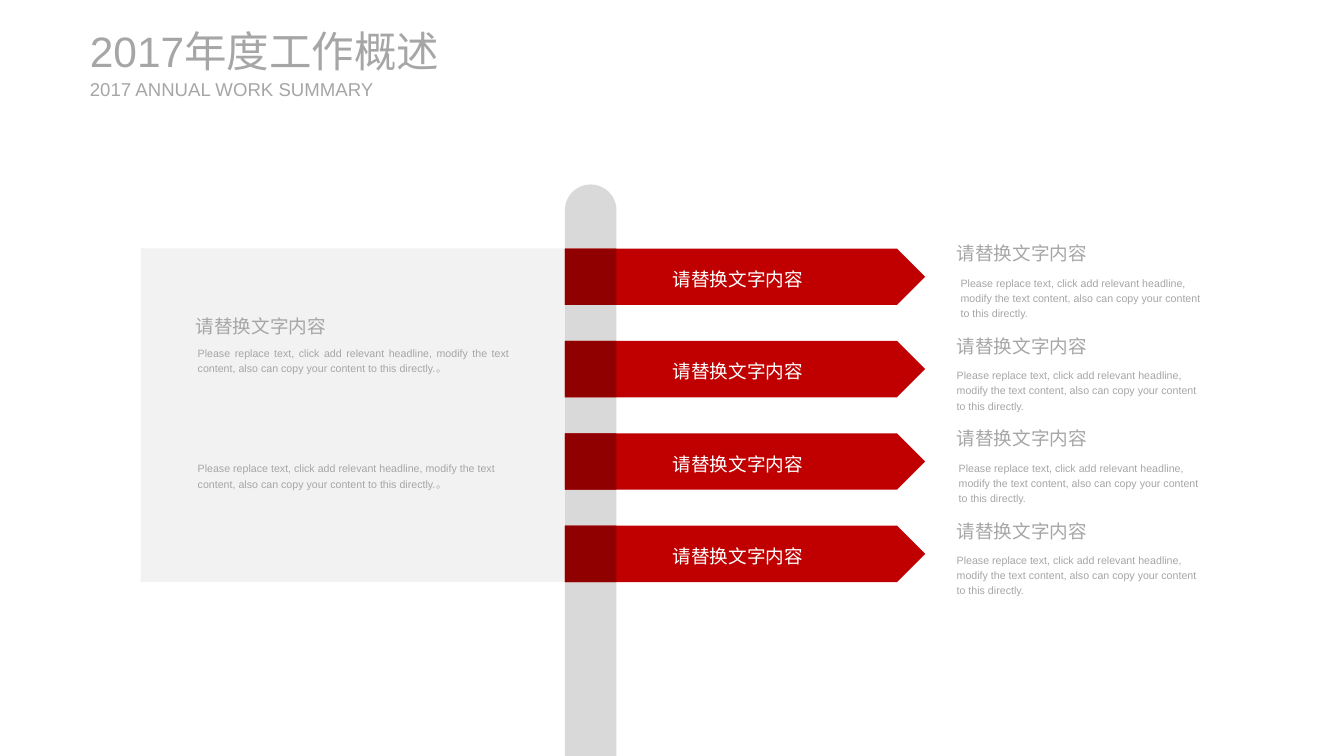
from pptx import Presentation
from pptx.dml.color import RGBColor
from pptx.enum.shapes import MSO_SHAPE
from pptx.enum.text import MSO_ANCHOR, PP_ALIGN
from pptx.util import Inches, Pt

RECT = MSO_SHAPE.RECTANGLE
ARROW = MSO_SHAPE.PENTAGON
ROUND_TOP = MSO_SHAPE.ROUND_2_SAME_RECTANGLE
TOP, MIDDLE = MSO_ANCHOR.TOP, MSO_ANCHOR.MIDDLE
LEFT, CENTER, JUSTIFY = PP_ALIGN.LEFT, PP_ALIGN.CENTER, PP_ALIGN.JUSTIFY

COLORS = {
    "pole": "D9D9D9",
    "panel": "F2F2F2",
    "arrow": "C00000",
    "fold": "900000",
    "label": "FFFFFF",
    "text": "A6A6A6",
}
FONT = "Arial"
WIDTH, HEIGHT = Inches(14.06), Inches(7.91)

# Positions and sizes are percentages of the slide's width and height
POLE_X, POLE_W = 42.03, 3.84
POLE_Y = 24.4
ROW_Y, ROW_H, ROW_STEP = 32.87, 7.46, 12.22
ARROW_W = 26.81
PANEL_X = 10.46
NOTE_X = 70.48
NOTE_INDENTS = [0.29, 0, 0.15, 0]
HEADING_W, HEADING_H = 11.95, 4.55

HEADING = "请替换文字内容"
BODY = ("Please replace text, click add relevant headline, modify the text "
        "content, also can copy your content to this directly.")


def place(x, y, w, h):
    return (int(WIDTH * x / 100), int(HEIGHT * y / 100),
            int(WIDTH * w / 100), int(HEIGHT * h / 100))


def write(sp, text, size, color="text", align=LEFT, anchor=TOP, spacing=1.2):
    tf = sp.text_frame
    tf.word_wrap = True
    tf.vertical_anchor = anchor
    p = tf.paragraphs[0]
    p.alignment = align
    p.line_spacing = spacing
    r = p.add_run()
    r.text = text
    r.font.name = FONT
    r.font.size = Pt(size)
    r.font.color.rgb = RGBColor.from_string(COLORS[color])


def add_block(slide, kind, box, color):
    sp = slide.shapes.add_shape(kind, *place(*box))
    sp.shadow.inherit = False
    sp.fill.solid()
    sp.fill.fore_color.rgb = RGBColor.from_string(COLORS[color])
    sp.line.fill.background()
    return sp


def add_text(slide, box, text, size, align=LEFT):
    write(slide.shapes.add_textbox(*place(*box)), text, size, align=align)


def add_title(slide, box, text, size):
    sp = slide.shapes.add_textbox(*place(*box))
    tf = sp.text_frame
    tf.margin_left = tf.margin_right = tf.margin_top = tf.margin_bottom = 0
    write(sp, text, size, anchor=MIDDLE, spacing=1.0)


def add_row(slide, y, indent):
    # Arrow with its dark fold over the pole
    arrow = add_block(slide, ARROW, (POLE_X, y, ARROW_W, ROW_H), "arrow")
    write(arrow, HEADING, 14, "label", CENTER, MIDDLE)
    add_block(slide, RECT, (POLE_X, y, POLE_W, ROW_H), "fold")
    # Note to the right of the arrow
    add_text(slide, (NOTE_X, y - 2.02, HEADING_W, HEADING_H), HEADING, 14)
    add_text(slide, (NOTE_X + indent, y + 2.78, 19.42, 7.21), BODY, 8)


def add_panel(slide):
    height = (len(NOTE_INDENTS) - 1) * ROW_STEP + ROW_H
    add_block(slide, RECT, (PANEL_X, ROW_Y, POLE_X - PANEL_X, height), "panel")
    add_text(slide, (13.87, 40.46, HEADING_W, HEADING_H), HEADING, 14)
    for y, align in [(44.88, JUSTIFY), (60.18, LEFT)]:
        add_text(slide, (14.01, y, 24.61, 5.18), BODY + "。", 8, align)


def main():
    prs = Presentation()
    prs.slide_width, prs.slide_height = WIDTH, HEIGHT
    slide = prs.slides.add_slide(prs.slide_layouts[6])

    # Pole
    pole = add_block(slide, ROUND_TOP,
                     (POLE_X, POLE_Y, POLE_W, 100 - POLE_Y), "pole")
    pole.adjustments[0] = 0.5
    pole.adjustments[1] = 0

    # Summary panel and signpost rows
    add_panel(slide)
    for i, indent in enumerate(NOTE_INDENTS):
        add_row(slide, ROW_Y + i * ROW_STEP, indent)

    # Titles
    add_title(slide, (6.69, 3.29, 30.73, 6.83), "2017年度工作概述", 32)
    add_title(slide, (6.69, 10.24, 21.83, 3.03), "2017 ANNUAL WORK SUMMARY", 14)

    prs.save("out.pptx")


if __name__ == "__main__":
    main()
